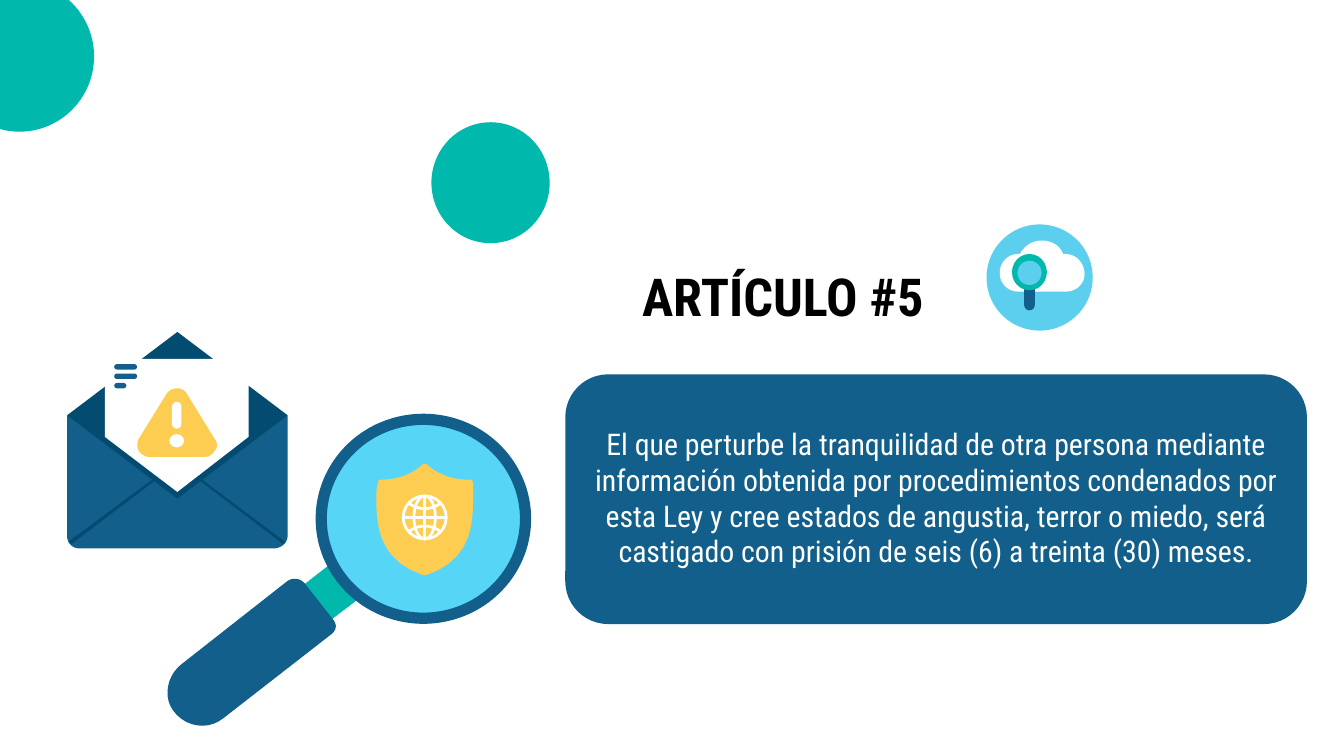
from dataclasses import dataclass
from typing import Optional

from lxml import etree
from pptx import Presentation
from pptx import util as u
from pptx.dml.color import RGBColor
from pptx.enum import shapes, text
from pptx.oxml.ns import qn

COLORS = {
    "teal": "01B8AC", "blue": "115F8A", "navy": "044B72", "sky": "5CCFEE",
    "lens": "57D5F7", "yellow": "FDCD51", "white": "FFFFFF", "black": "000000",
}
FONT = "Roboto Condensed"
CURVE_STEPS = 10
OVAL = shapes.MSO_SHAPE.OVAL
ROUNDED = shapes.MSO_SHAPE.ROUNDED_RECTANGLE


@dataclass
class Preset:
    kind: shapes.MSO_SHAPE
    box: tuple[float, float, float, float]
    fill: Optional[str]
    line: Optional[str] = None
    weight: float = 0
    corner: Optional[float] = None


@dataclass
class Outline:
    """Two numbers make a straight step, six a Bezier curve."""
    steps: list[tuple[float, ...]]
    fill: Optional[str]
    line: Optional[str] = None
    weight: float = 0
    closed: bool = True


@dataclass
class Label:
    box: tuple[float, float, float, float]
    words: str
    size: float
    color: str
    bold: bool
    anchor: text.MSO_ANCHOR


def rgb(name: str) -> RGBColor:
    return RGBColor.from_string(COLORS[name])


def paint(shape, part) -> None:
    shape.shadow.inherit = False
    if part.fill:
        shape.fill.solid()
        shape.fill.fore_color.rgb = rgb(part.fill)
    else:
        shape.fill.background()
    if part.line:
        shape.line.color.rgb = rgb(part.line)
        shape.line.width = u.Pt(part.weight)
    else:
        shape.line.fill.background()


def draw_preset(page, part: Preset) -> None:
    shape = page.shapes.add_shape(part.kind, *map(u.Inches, part.box))
    if part.corner is not None:
        shape.adjustments[0] = part.corner
    paint(shape, part)


def flatten(steps: list[tuple[float, ...]]) -> list[tuple[float, float]]:
    points = [steps[0]]
    for step in steps[1:]:
        if len(step) == 2:
            points.append(step)
            continue
        knots = [points[-1], step[:2], step[2:4], step[4:]]
        for i in range(1, CURVE_STEPS + 1):
            t = i / CURVE_STEPS
            weights = ((1 - t) ** 3, 3 * t * (1 - t) ** 2, 3 * t * t * (1 - t), t ** 3)
            points.append(tuple(sum(w * k[axis] for w, k in zip(weights, knots)) for axis in (0, 1)))
    return points


def draw_outline(page, part: Outline) -> None:
    points = [(u.Inches(x), u.Inches(y)) for x, y in flatten(part.steps)]
    builder = page.shapes.build_freeform(*points[0])
    builder.add_line_segments(points[1:], close=part.closed)
    paint(builder.convert_to_shape(), part)


def draw_line(page, start: tuple[float, float], end: tuple[float, float], color: str, weight: float) -> None:
    line = page.shapes.add_connector(shapes.MSO_CONNECTOR.STRAIGHT, *map(u.Inches, start + end))
    line.line.color.rgb = rgb(color)
    line.line.width = u.Pt(weight)
    etree.SubElement(line._element.spPr, qn("a:effectLst"))


def draw_label(page, label: Label) -> None:
    frame = page.shapes.add_textbox(*map(u.Inches, label.box)).text_frame
    frame.word_wrap = True
    frame.vertical_anchor = label.anchor
    frame.margin_left = frame.margin_right = u.Inches(0.1)
    frame.margin_top = frame.margin_bottom = u.Inches(0.1)
    paragraph = frame.paragraphs[0]
    paragraph.text = label.words
    paragraph.alignment = text.PP_ALIGN.CENTER
    paragraph.font.name = FONT
    paragraph.font.size = u.Pt(label.size)
    paragraph.font.bold = label.bold
    paragraph.font.color.rgb = rgb(label.color)


def draw_parts(page, parts: list) -> None:
    for part in parts:
        (draw_preset if isinstance(part, Preset) else draw_outline)(page, part)


def draw_globe(page, x: float, y: float, radius: float) -> None:
    color, weight = "white", 1.5
    for half in (radius, radius / 2):
        draw_preset(page, Preset(OVAL, (x - half, y - radius, 2 * half, 2 * radius), None, color, weight))
    draw_line(page, (x - radius, y), (x + radius, y), color, weight)
    draw_line(page, (x, y - radius), (x, y + radius), color, weight)
    # Parallels bow towards the equator
    for side in (-1, 1):
        edge, middle = y + side * 0.11, y + side * 0.05
        arc = [(x - 0.12, edge), (x - 0.06, middle, x + 0.06, middle, x + 0.12, edge)]
        draw_outline(page, Outline(arc, None, color, weight, closed=False))


CLOUD_ICON = [
    Preset(OVAL, (7.34, 1.67, 0.79, 0.79), "sky"),
    Outline([(7.75, 1.79), (7.68, 1.79, 7.62, 1.83, 7.59, 1.89), (7.57, 1.89),
             (7.5, 1.89, 7.43, 1.96, 7.44, 2.04), (7.44, 2.11, 7.5, 2.17, 7.58, 2.17), (7.93, 2.17),
             (8.01, 2.17, 8.07, 2.11, 8.07, 2.04), (8.07, 1.96, 8.01, 1.89, 7.93, 1.89), (7.91, 1.89),
             (7.89, 1.83, 7.83, 1.79, 7.75, 1.79)], "white"),
    Preset(ROUNDED, (7.62, 2.08, 0.08, 0.23), "blue", corner=0.5),
    Preset(OVAL, (7.53, 1.89, 0.26, 0.27), "teal"),
    Preset(OVAL, (7.57, 1.94, 0.18, 0.18), "sky"),
]
BACKDROP = [
    Preset(OVAL, (3.21, 0.91, 0.88, 0.9), "teal"),
    Preset(OVAL, (-0.41, -0.14, 1.11, 1.12), "teal"),
    Preset(ROUNDED, (4.22, 2.8, 5.49, 1.83), "blue", "blue", 2),
]
MAGNIFIER = [
    # Neck, handle and lens
    Outline([(2.48, 4.18), (1.57, 4.89), (1.77, 5.14), (2.69, 4.44)], "teal"),
    Outline([(2.26, 4.34), (2.23, 4.31, 2.18, 4.3, 2.14, 4.33), (1.35, 4.95),
             (1.25, 5.03, 1.22, 5.18, 1.29, 5.28), (1.38, 5.41, 1.55, 5.43, 1.66, 5.34), (2.47, 4.71),
             (2.5, 4.68, 2.5, 4.65, 2.48, 4.62)], "blue", "blue", 0.75),
    Preset(OVAL, (2.39, 3.12, 1.52, 1.48), "lens", "blue", 6),
    # Shield
    Outline([(3.52, 3.66), (3.52, 3.6), (3.52, 3.58, 3.51, 3.57, 3.49, 3.57),
             (3.36, 3.57, 3.26, 3.53, 3.18, 3.46), (3.17, 3.45, 3.15, 3.45, 3.14, 3.46),
             (3.06, 3.53, 2.96, 3.57, 2.83, 3.57), (2.82, 3.57, 2.81, 3.58, 2.81, 3.6), (2.8, 3.66),
             (2.8, 3.87, 2.79, 4.16, 3.15, 4.28), (3.17, 4.28),
             (3.53, 4.16, 3.52, 3.87, 3.52, 3.66)], "yellow"),
]
ENVELOPE = [
    # Body, folds and open flap
    Outline([(0.5, 3.09), (0.5, 3.99), (0.5, 4.04, 0.54, 4.08, 0.59, 4.08), (2.04, 4.08),
             (2.09, 4.08, 2.14, 4.04, 2.14, 3.99), (2.14, 3.09)], "blue"),
    Outline([(2.11, 4.05), (1.32, 3.45), (0.53, 4.05), (0.51, 4.03), (1.32, 3.43), (2.12, 4.03)], "navy"),
    Outline([(1.32, 2.47), (0.5, 3.09), (1.32, 3.71), (2.14, 3.09)], "navy"),
    # Letter with warning sign
    Outline([(0.78, 2.67), (0.78, 3.25), (1.32, 3.66), (1.85, 3.25), (1.85, 2.67)], "white"),
    Outline([(1.6, 3.27), (1.39, 2.93), (1.37, 2.9, 1.35, 2.89, 1.32, 2.89),
             (1.29, 2.89, 1.26, 2.9, 1.24, 2.93), (1.03, 3.27), (1.02, 3.3, 1.02, 3.33, 1.03, 3.35),
             (1.05, 3.38, 1.08, 3.4, 1.11, 3.4), (1.52, 3.4), (1.56, 3.4, 1.58, 3.38, 1.6, 3.35),
             (1.62, 3.33, 1.62, 3.3, 1.6, 3.27)], "yellow"),
    Preset(ROUNDED, (1.28, 2.99, 0.07, 0.2), "white", corner=0.5),
    Preset(OVAL, (1.26, 3.23, 0.11, 0.1), "white"),
    # Lines of writing
    *(Preset(ROUNDED, (0.85, 2.71 + 0.07 * row, width, 0.04), "blue", corner=0.5)
      for row, width in enumerate((0.17, 0.17, 0.09))),
]
LABELS = [
    Label((4.23, 1.87, 3.19, 0.63), "ARTÍCULO #5", 28, "black", True, text.MSO_ANCHOR.TOP),
    Label((4.22, 2.64, 5.49, 2.12),
          "El que perturbe la tranquilidad de otra persona mediante información obtenida por "
          "procedimientos condenados por esta Ley y cree estados de angustia, terror o miedo, "
          "será castigado con prisión de seis (6) a treinta (30) meses.",
          16, "white", False, text.MSO_ANCHOR.MIDDLE),
]


def main() -> None:
    deck = Presentation()
    deck.slide_width, deck.slide_height = u.Inches(10), u.Inches(10 * 9 / 16)
    page = deck.slides.add_slide(deck.slide_layouts[6])
    draw_parts(page, CLOUD_ICON + BACKDROP + MAGNIFIER)
    draw_globe(page, 3.16, 3.85, 0.16)
    draw_parts(page, ENVELOPE)
    for label in LABELS:
        draw_label(page, label)
    deck.save("out.pptx")


if __name__ == "__main__":
    main()
